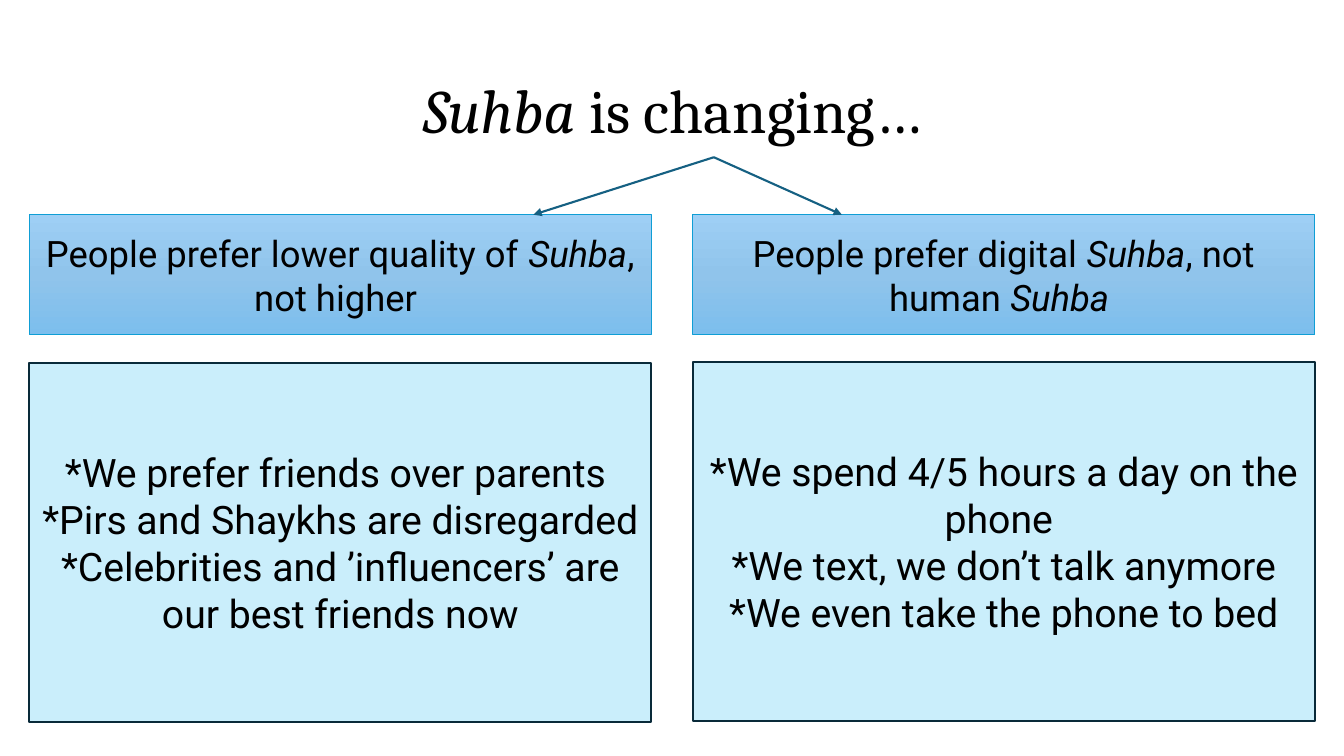
from copy import deepcopy

from lxml import etree
from pptx import Presentation
from pptx.dml.color import RGBColor
from pptx.enum.shapes import MSO_CONNECTOR, MSO_SHAPE
from pptx.enum.text import MSO_ANCHOR, MSO_AUTO_SIZE, PP_ALIGN
from pptx.oxml.ns import qn
from pptx.util import Inches, Pt

RECT = MSO_SHAPE.RECTANGLE
STRAIGHT = MSO_CONNECTOR.STRAIGHT
CENTER = PP_ALIGN.CENTER
MIDDLE = MSO_ANCHOR.MIDDLE
NO_AUTOFIT = MSO_AUTO_SIZE.NONE
TITLE_ONLY = 5

COLORS = {
    "text": "000000",
    "head_top": "9ECFF5", "head_mid": "90C4EB", "head_low": "7CBEED",
    "head_line": "0F9ED5",
    "body": "CAEEFB", "body_line": "092A39",
    "arrow": "156082",
}

SLIDE_W, SLIDE_H = 13.33, 7.5
MARGIN, GAP = 0.29, 0.41
COL_W = (SLIDE_W - 2 * MARGIN - GAP) / 2
HEAD_TOP, HEAD_H = 2.13, 1.19
BODY_H = 3.56
FORK = (7.08, 1.56)

# heading, body top, arrow tip, points
COLUMNS = [
    ("People prefer lower quality of _Suhba_, not higher ", 3.6, 5.29,
     ["*We prefer friends over parents ",
      "*Pirs and Shaykhs are disregarded ",
      "*Celebrities and ’influencers’ are our best friends now"]),
    ("People prefer digital _Suhba_, not human _Suhba _", 3.59, 8.35,
     ["*We spend 4/5 hours a day on the phone ",
      "*We text, we don’t talk anymore",
      "*We even take the phone to bed"]),
]


def rgb(name):
    return RGBColor.from_string(COLORS[name])


def write(sp, lines, size, font="Roboto", spacing=None):
    """Fill a shape with centred lines; _underscores_ enclose italics."""
    tf = sp.text_frame
    tf.word_wrap = True
    tf.auto_size = NO_AUTOFIT
    tf.vertical_anchor = MIDDLE
    for i, line in enumerate(lines):
        p = tf.add_paragraph() if i else tf.paragraphs[0]
        p.alignment = CENTER
        if spacing:
            p.line_spacing = spacing
        for j, part in enumerate(line.split("_")):
            if part:
                r = p.add_run()
                r.text = part
                r.font.name = font
                r.font.size = Pt(size)
                r.font.italic = j % 2 == 1
                r.font.color.rgb = rgb("text")


def add_box(s, box, line, width):
    sp = s.shapes.add_shape(RECT, *map(Inches, box))
    sp.shadow.inherit = False
    sp.line.color.rgb = rgb(line)
    sp.line.width = Pt(width)
    return sp


def fill_gradient(sp, names):
    """Spread three colours evenly from top to bottom."""
    fill = sp.fill
    fill.gradient()
    fill.gradient_angle = 270
    first = next(sp._element.iter(qn("a:gs")))
    first.addnext(deepcopy(first))
    for i, (stop, name) in enumerate(zip(fill.gradient_stops, names)):
        stop.position = i / (len(names) - 1)
        stop.color.rgb = rgb(name)


def add_arrow(s, start, end):
    c = s.shapes.add_connector(STRAIGHT, *map(Inches, start + end))
    c.line.color.rgb = rgb("arrow")
    c.line.width = Pt(1.5)
    etree.SubElement(c.line._get_or_add_ln(), qn("a:tailEnd"), type="triangle")
    etree.SubElement(c._element.spPr, qn("a:effectLst"))


def add_title(s, box):
    title = s.shapes.title
    title.left, title.top, title.width, title.height = map(Inches, box)
    write(title, ["_Suhba_ is changing…"], 44, font="Cambria", spacing=0.9)


def add_column(s, left, heading, body_top, tip, points):
    head = add_box(s, (left, HEAD_TOP, COL_W, HEAD_H), "head_line", 1)
    fill_gradient(head, ["head_top", "head_mid", "head_low"])
    write(head, [heading], 26)
    add_arrow(s, FORK, (tip, HEAD_TOP))
    body = add_box(s, (left, body_top, COL_W, BODY_H), "body_line", 1.5)
    body.fill.solid()
    body.fill.fore_color.rgb = rgb("body")
    write(body, points, 28)


def main():
    prs = Presentation()
    prs.slide_width, prs.slide_height = Inches(SLIDE_W), Inches(SLIDE_H)
    s = prs.slides.add_slide(prs.slide_layouts[TITLE_ONLY])
    add_title(s, (0.92, 0.4, 11.5, 1.45))
    for i, column in enumerate(COLUMNS):
        add_column(s, MARGIN + i * (COL_W + GAP), *column)
    prs.save("out.pptx")


if __name__ == "__main__":
    main()
